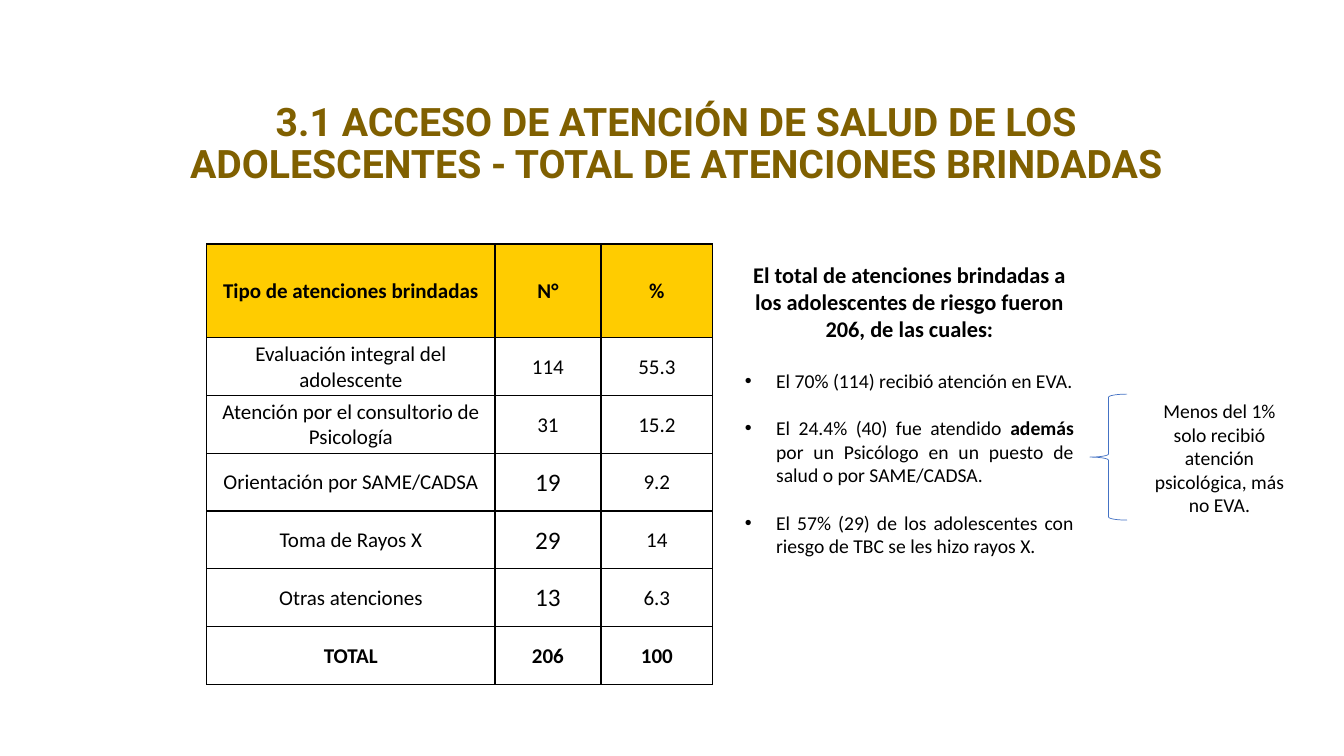
from lxml.etree import SubElement
from pptx import Presentation
from pptx.dml.color import RGBColor
from pptx.enum.shapes import MSO_SHAPE
from pptx.enum.text import MSO_ANCHOR, PP_ALIGN
from pptx.oxml.ns import qn
from pptx.util import Inches, Pt

BLACK, GOLD, BROWN, BLUE = "000000", "FFCC00", "806000", "4472C4"

TABLE_ROWS = [
    ("Tipo de atenciones brindadas", "N°", "%"),
    ("Evaluación integral del adolescente", "114", "55.3"),
    ("Atención por el consultorio de Psicología", "31", "15.2"),
    ("Orientación por SAME/CADSA", "19", "9.2"),
    ("Toma de Rayos X", "29", "14"),
    ("Otras atenciones", "13", "6.3"),
    ("TOTAL", "206", "100"),
]
COLUMN_WIDTHS = (2.86, 1.05, 1.11)
TABLE_HEIGHT, HEADER_HEIGHT = 4.37, 0.93
LARGE_NUMBERS = ("19", "29", "13")

# Each finding is a list of (text, bold) runs
FINDINGS = [
    [("El 70% (114) recibió atención en EVA.", False)],
    [("El 24.4% (40) fue atendido ", False), ("además ", True),
     ("por un Psicólogo en un puesto de salud o por SAME/CADSA.", False)],
    [("El 57% (29) de los adolescentes con riesgo de TBC se les hizo rayos X.", False)],
]


def color(value):
    return RGBColor.from_string(value)


def apply(target, values):
    for name, value in values.items():
        setattr(target, name, value)


class SlideBuilder:
    def __init__(self, slide, font="Calibri"):
        self.slide = slide
        self.font = font

    def add_runs(self, paragraph, runs, size, hue=BLACK, font=None, **layout):
        apply(paragraph, {"alignment": PP_ALIGN.CENTER, **layout})
        for text, bold in runs:
            run = paragraph.add_run()
            run.text = text
            apply(run.font, {"size": Pt(size), "bold": bold, "name": font or self.font})
            run.font.color.rgb = color(hue)

    def text_box(self, left, top, width, height, anchor=MSO_ANCHOR.TOP):
        shape = self.slide.shapes.add_textbox(*map(Inches, (left, top, width, height)))
        apply(shape.text_frame, {"word_wrap": True, "vertical_anchor": anchor})
        return shape.text_frame

    def bullet(self, paragraph, indent=0.31):
        properties = paragraph._p.get_or_add_pPr()
        properties.set("marL", str(Inches(indent)))
        properties.set("indent", str(-Inches(indent)))
        SubElement(properties, qn("a:buFont")).set("typeface", "Arial")
        SubElement(properties, qn("a:buChar")).set("char", "•")

    def borders(self, cell):
        properties = cell._tc.get_or_add_tcPr()
        for position, side in enumerate(("a:lnL", "a:lnR", "a:lnT", "a:lnB")):
            line = properties.makeelement(qn(side), {"w": str(Pt(1))})
            fill = SubElement(line, qn("a:solidFill"))
            SubElement(fill, qn("a:srgbClr")).set("val", BLACK)
            properties.insert(position, line)

    def table(self, left, top, rows):
        frame = self.slide.shapes.add_table(
            len(rows), len(COLUMN_WIDTHS), Inches(left), Inches(top),
            Inches(sum(COLUMN_WIDTHS)), Inches(TABLE_HEIGHT))
        table = frame.table
        apply(table, {"first_row": False, "horz_banding": False})
        for column, width in zip(table.columns, COLUMN_WIDTHS):
            column.width = Inches(width)
        body_height = (TABLE_HEIGHT - HEADER_HEIGHT) / (len(rows) - 1)
        for index, texts in enumerate(rows):
            header = index == 0
            bold = header or index == len(rows) - 1
            table.rows[index].height = Inches(HEADER_HEIGHT if header else body_height)
            for cell, text in zip(table.rows[index].cells, texts):
                apply(cell, {"vertical_anchor": MSO_ANCHOR.MIDDLE,
                             "margin_left": Inches(0.01), "margin_right": Inches(0.01),
                             "margin_top": Inches(0.01), "margin_bottom": 0})
                if header:
                    cell.fill.solid()
                    cell.fill.fore_color.rgb = color(GOLD)
                else:
                    cell.fill.background()
                self.borders(cell)
                size = 18 if text in LARGE_NUMBERS else 15
                self.add_runs(cell.text_frame.paragraphs[0], [(text, bold)], size)

    def brace(self, left, top, width, height):
        shape = self.slide.shapes.add_shape(
            MSO_SHAPE.LEFT_BRACE, *map(Inches, (left, top, width, height)))
        shape.shadow.inherit = False
        shape.fill.background()
        shape.line.color.rgb = color(BLUE)
        shape.line.width = Pt(0.5)


def main():
    presentation = Presentation()
    apply(presentation, {"slide_width": Inches(13.33), "slide_height": Inches(7.5)})
    builder = SlideBuilder(presentation.slides.add_slide(presentation.slide_layouts[6]))

    # Title
    title = builder.text_box(1.23, 0.77, 10.95, 1.33, MSO_ANCHOR.MIDDLE)
    builder.add_runs(title.paragraphs[0],
                     [("3.1 ACCESO DE ATENCIÓN DE SALUD DE LOS ADOLESCENTES - "
                       "TOTAL DE ATENCIONES BRINDADAS", True)],
                     28, BROWN, "Roboto", line_spacing=0.9)

    # Table of services
    builder.table(2.05, 2.42, TABLE_ROWS)

    # Findings
    findings = builder.text_box(7.29, 2.54, 3.46, 3.06)
    builder.add_runs(findings.paragraphs[0],
                     [("El total de atenciones brindadas a los adolescentes de riesgo "
                       "fueron 206, de las cuales:", True)], 16)
    for index, runs in enumerate(FINDINGS):
        paragraph = findings.add_paragraph()
        builder.add_runs(paragraph, runs, 14, alignment=PP_ALIGN.JUSTIFY,
                         space_before=Pt(17 if index else 19.5))
        builder.bullet(paragraph)

    # Brace and side note
    builder.brace(10.81, 3.91, 0.37, 1.25)
    note = builder.text_box(11.29, 3.91, 1.61, 1.28)
    builder.add_runs(note.paragraphs[0],
                     [("Menos del 1% solo recibió atención psicológica, más no EVA.", False)],
                     14)

    presentation.save("out.pptx")


if __name__ == "__main__":
    main()
